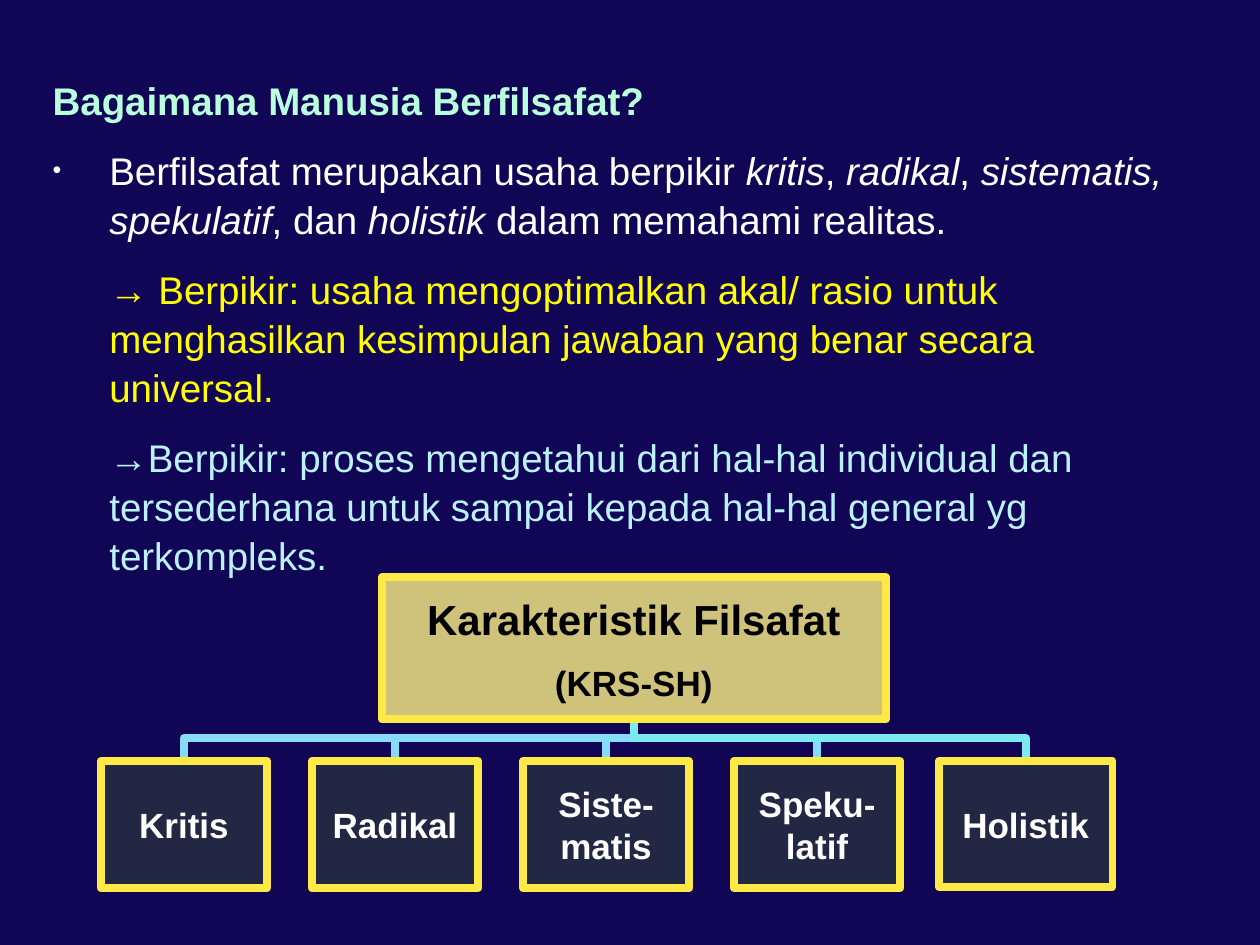
import pptx
import pptx.util
import pptx.dml.color
import pptx.enum.shapes
import pptx.enum.text
import pptx.oxml
import pptx.oxml.ns
from pptx.util import Inches

HUES = {
    "back": "110656", "head": "B9FFDC", "white": "FFFFFF", "dot": "F9F9F9",
    "yellow": "FFFF00", "pale": "BCF0FA", "black": "000000", "edge": "FFE947",
    "gold": "FFF185", "slate": "2A373D", "sky": "86DBF6", "aqua": "7BEBF1",
}
TRAITS = ["Kritis", "Radikal", "Siste-matis", "Speku-latif", "Holistik"]


def color(name):
    return pptx.dml.color.RGBColor.from_string(HUES[name])


def add_tag(host, tag, **attrs):
    node = pptx.oxml.parse_xml(f"<a:{tag} {pptx.oxml.ns.nsdecls('a')}/>")
    for key, value in attrs.items():
        node.set(key, str(value))
    host.append(node)
    return node


def write(frame, text, size=22, hue="white", bold=False, align=None, line=None,
          before=0, after=0, left=0, hang=0, bullet=None):
    first = frame.paragraphs[0]
    para = frame.add_paragraph() if first.runs else first
    para.alignment = align
    para.space_before = pptx.util.Pt(before)
    para.space_after = pptx.util.Pt(after)
    if line:
        para.line_spacing = pptx.util.Pt(line)
    props = para._p.get_or_add_pPr()
    props.set("marL", str(Inches(left)))
    props.set("indent", str(Inches(-hang)))
    if bullet:
        tint = add_tag(props, "buClr")
        add_tag(tint, "srgbClr", val=HUES["dot"])
        add_tag(props, "buSzPct", val=65000)
        add_tag(props, "buFont", typeface="Arial")
        add_tag(props, "buChar", char=bullet)
    for num, part in enumerate(text.split("*")):
        run = para.add_run()
        run.text = part
        run.font.name = "Arial"
        run.font.size = pptx.util.Pt(size)
        run.font.bold = bold
        run.font.italic = num % 2 == 1
        run.font.color.rgb = color(hue)


def add_body(slide, left, top, width, height):
    box = slide.shapes.add_textbox(*map(Inches, (left, top, width, height)))
    frame = box.text_frame
    frame.word_wrap = True
    write(frame, "Bagaimana Manusia Berfilsafat?", hue="head", bold=True,
          line=31, before=12, left=0.15)
    style = dict(line=28, before=12, left=0.6)
    write(frame, "Berfilsafat merupakan usaha berpikir *kritis*, *radikal*, "
          "*sistematis, spekulatif*, dan *holistik* dalam memahami realitas.",
          hang=0.45, bullet="•", **style)
    write(frame, "→ Berpikir: usaha mengoptimalkan akal/ rasio untuk "
          "menghasilkan kesimpulan jawaban yang benar secara universal.",
          hue="yellow", **style)
    write(frame, "→Berpikir: proses mengetahui dari hal-hal individual dan "
          "tersederhana untuk sampai kepada hal-hal general yg terkompleks.",
          hue="pale", **style)


def add_box(slide, left, top, width, height, fill, alpha, inset):
    box = slide.shapes.add_shape(pptx.enum.shapes.MSO_SHAPE.RECTANGLE,
                                 *map(Inches, (left, top, width, height)))
    box.shadow.inherit = False
    box.fill.solid()
    box.fill.fore_color.rgb = color(fill)
    tint = box._element.spPr.find(".//" + pptx.oxml.ns.qn("a:srgbClr"))
    add_tag(tint, "alpha", val=alpha * 1000)
    box.line.color.rgb = color("edge")
    box.line.width = pptx.util.Pt(4.5)
    frame = box.text_frame
    frame.word_wrap = True
    frame.vertical_anchor = pptx.enum.text.MSO_ANCHOR.MIDDLE
    frame.margin_left = frame.margin_right = Inches(inset)
    frame.margin_top = frame.margin_bottom = Inches(inset)
    return frame


def add_branch(slide, start, end, bend, hue):
    path = slide.shapes.build_freeform(*map(Inches, start), scale=1.0)
    turns = [(start[0], bend), (end[0], bend), end]
    path.add_line_segments([tuple(map(Inches, spot)) for spot in turns], close=False)
    shape = path.convert_to_shape()
    shape.shadow.inherit = False
    shape.fill.background()
    shape.line.color.rgb = color(hue)
    shape.line.width = pptx.util.Pt(4.5)


def add_chart(slide, left, top, width, height):
    center = pptx.enum.text.PP_ALIGN.CENTER
    step, wide, tall = 1.675, 1.32, 1.01
    row = top + height - tall
    root = (left + 2.23, top, 4, 1.13)
    stem = (root[0] + root[2] / 2, top + root[3])
    cells = [(left + num * step, row, wide, tall) for num in range(len(TRAITS) - 1)]
    cells.append((left + width - 1.38, row, 1.38, 1))
    for cell in cells:
        hue = "aqua" if cell is cells[-1] else "sky"
        add_branch(slide, stem, (cell[0] + cell[2] / 2, row), stem[1] + 0.15, hue)
    frame = add_box(slide, *root, "gold", 80, 0.02)
    write(frame, "Karakteristik Filsafat", size=24, hue="black", bold=True,
          align=center, after=10)
    write(frame, "(KRS-SH)", size=20, hue="black", bold=True, align=center)
    for cell, name in zip(cells, TRAITS):
        frame = add_box(slide, *cell, "slate", 70, 0.01)
        write(frame, name, size=20, bold=True, align=center)


def main():
    deck = pptx.Presentation()
    deck.slide_width, deck.slide_height = Inches(10), Inches(7.5)
    slide = deck.slides.add_slide(deck.slide_layouts[6])
    slide.background.fill.solid()
    slide.background.fill.fore_color.rgb = color("back")
    add_body(slide, 0.17, 0.5, 9.5, 4)
    add_chart(slide, 0.8, 4.58, 8.03, 2.47)
    deck.save("out.pptx")


if __name__ == "__main__":
    main()
